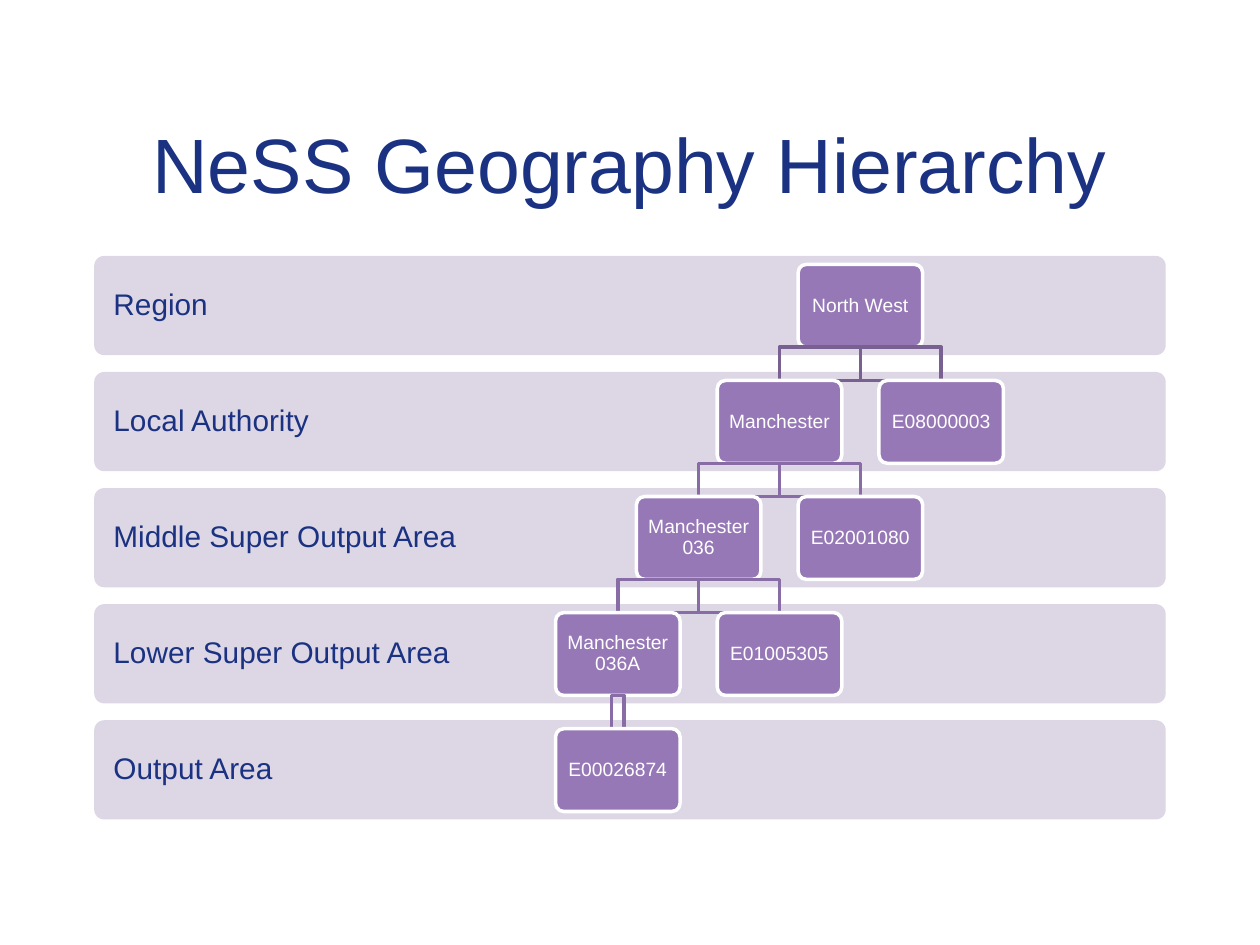
from dataclasses import dataclass
from typing import Optional

from pptx import Presentation
from pptx.dml.color import RGBColor
from pptx.enum.shapes import MSO_SHAPE as Shape
from pptx.enum.text import MSO_ANCHOR as Anchor, PP_ALIGN as Align
from pptx.util import Cm, Pt

COLORS = {
    "navy": "1A3281",
    "band": "DCD6E5",
    "node": "9678B6",
    "white": "FFFFFF",
    "link_top": "786091",
    "link": "886CA5",
}
ROW_STEP, COL_STEP = 2.34, 1.63
BAND_LEFT, BAND_TOP, BAND_W, BAND_H = 1.9, 5.16, 21.6, 2.0
NODE_LEFT, NODE_TOP, NODE_W, NODE_H = 11.2, 5.33, 2.51, 1.67
LINK_H, STRAIGHT_W = 0.67, 0.25


@dataclass
class Node:
    text: str
    row: int
    col: int
    parent_col: Optional[int] = None


LEVELS = [
    "Region",
    "Local Authority",
    "Middle Super Output Area",
    "Lower Super Output Area",
    "Output Area",
]
NODES = [
    Node("North West", 0, 3),
    Node("Manchester", 1, 2, 3),
    Node("Manchester 036", 2, 1, 2),
    Node("Manchester\n036A", 3, 0, 1),
    Node("E00026874", 4, 0, 0),
    Node("E01005305", 3, 2, 1),
    Node("E02001080", 2, 3, 2),
    Node("E08000003", 1, 4, 3),
]


def rgb(name: str) -> RGBColor:
    return RGBColor.from_string(COLORS[name])


def write(s, text: str, *, size: float, color: str, align=Align.LEFT,
          inset: Optional[float] = None, spacing: Optional[float] = None) -> None:
    tf = s.text_frame
    tf.word_wrap = True
    tf.vertical_anchor = Anchor.MIDDLE
    if inset is not None:
        tf.margin_left = tf.margin_right = Cm(inset)
        tf.margin_top = tf.margin_bottom = Cm(inset)
    for i, line in enumerate(text.split("\n")):
        p = tf.add_paragraph() if i else tf.paragraphs[0]
        p.alignment = align
        if spacing is not None:
            p.line_spacing = spacing
        r = p.add_run()
        r.text = line
        r.font.name = "Arial"
        r.font.size = Pt(size)
        r.font.color.rgb = rgb(color)


def add_box(sp, kind, left: float, top: float, width: float, height: float,
            fill: Optional[str] = None, line: Optional[str] = None):
    s = sp.add_shape(kind, Cm(left), Cm(top), Cm(width), Cm(height))
    s.shadow.inherit = False
    if kind == Shape.ROUNDED_RECTANGLE:
        s.adjustments[0] = 0.1
    if fill:
        s.fill.solid()
        s.fill.fore_color.rgb = rgb(fill)
    else:
        s.fill.background()
    if line:
        s.line.color.rgb = rgb(line)
        s.line.width = Pt(2)
    else:
        s.line.fill.background()
    return s


def add_band(sp, row: int, text: str) -> None:
    s = add_box(sp, Shape.ROUNDED_RECTANGLE, BAND_LEFT, BAND_TOP + row * ROW_STEP,
                BAND_W, BAND_H, fill="band")
    write(s, text, size=17, color="navy", inset=0.33, spacing=0.9)


def add_link(sp, node: Node) -> None:
    left = NODE_LEFT + NODE_W / 2 + min(node.col, node.parent_col) * COL_STEP
    width = COL_STEP
    if node.col == node.parent_col:
        left, width = left - STRAIGHT_W / 2, STRAIGHT_W
    top = NODE_TOP + (node.row - 1) * ROW_STEP + NODE_H
    color = "link_top" if node.row == 1 else "link"
    add_box(sp, Shape.RECTANGLE, left, top, width, LINK_H, line=color)


def add_node(sp, node: Node) -> None:
    if node.parent_col is not None:
        add_link(sp, node)
    s = add_box(sp, Shape.ROUNDED_RECTANGLE, NODE_LEFT + node.col * COL_STEP,
                NODE_TOP + node.row * ROW_STEP, NODE_W, NODE_H,
                fill="node", line="white")
    write(s, node.text, size=11, color="white", align=Align.CENTER,
          inset=0.13, spacing=0.9)


def main() -> None:
    prs = Presentation()
    prs.slide_width, prs.slide_height = Cm(25.4), Cm(19.05)
    sp = prs.slides.add_slide(prs.slide_layouts[6]).shapes
    for row, text in reversed(list(enumerate(LEVELS))):
        add_band(sp, row, text)
    for node in NODES:
        add_node(sp, node)
    title = sp.add_textbox(Cm(BAND_LEFT), Cm(1.7), Cm(BAND_W), Cm(3.18))
    write(title, "NeSS Geography Hierarchy", size=44, color="navy", align=Align.CENTER)
    prs.save("out.pptx")


if __name__ == "__main__":
    main()
